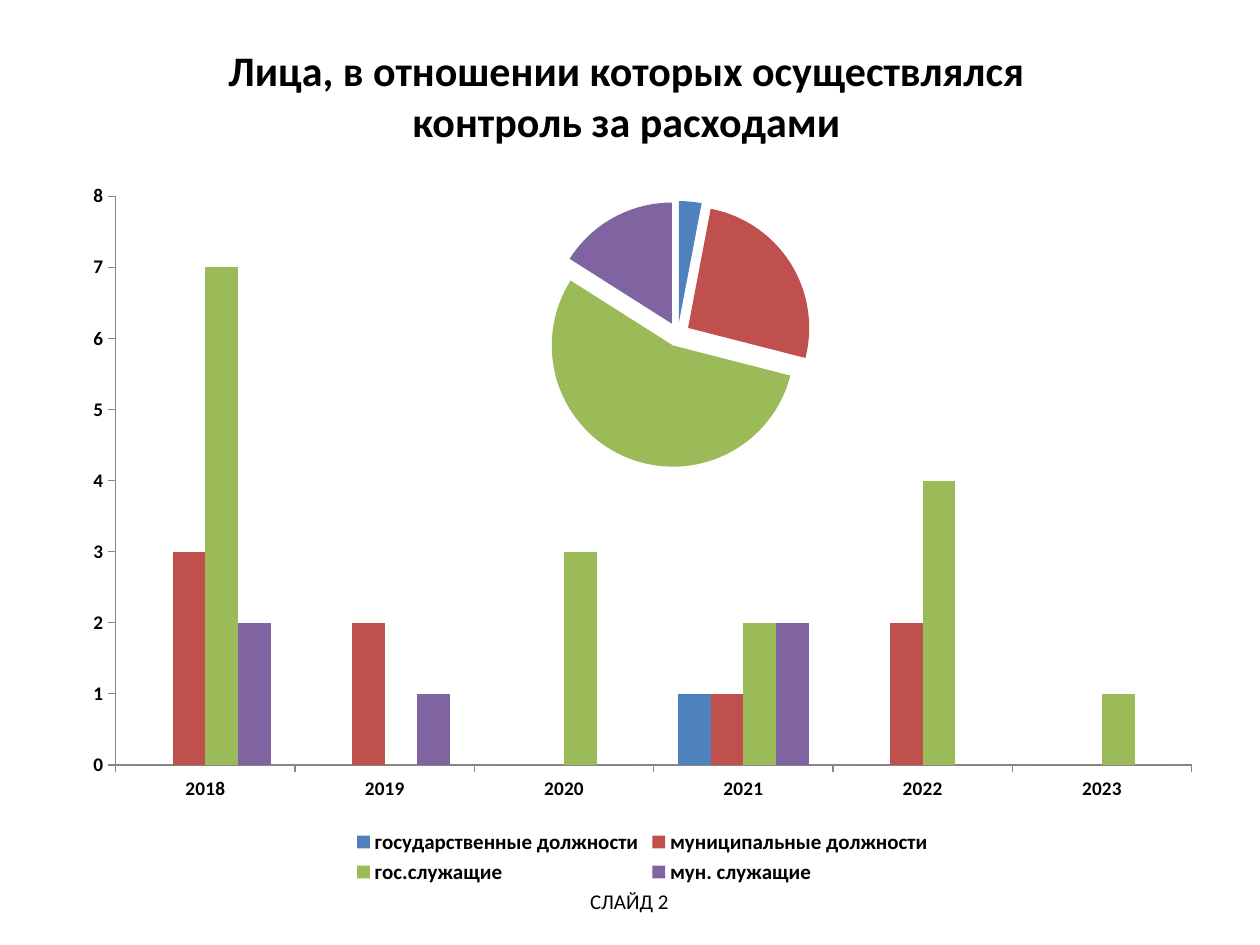
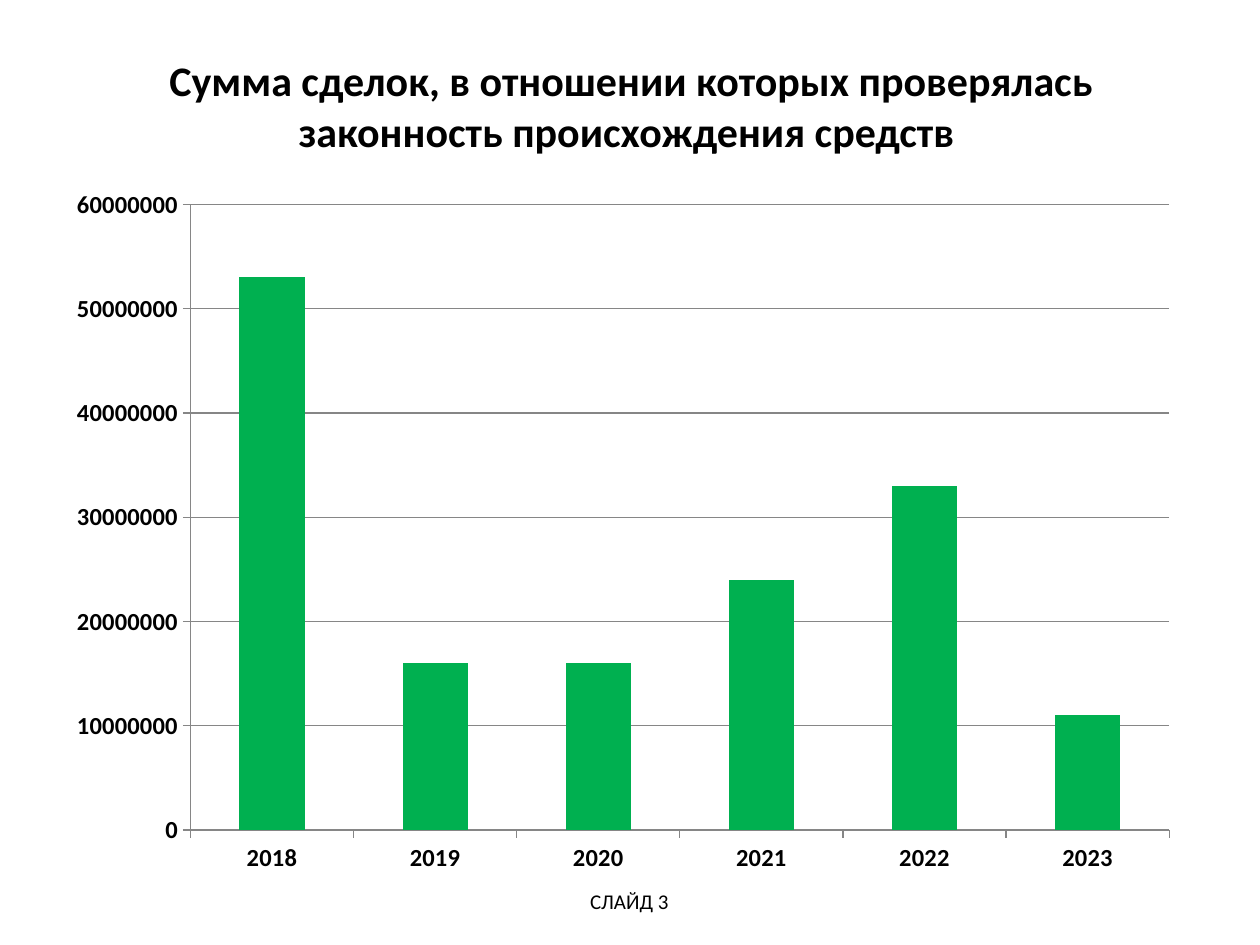
from lxml.etree import SubElement
from pptx import Presentation
from pptx.chart.data import CategoryChartData
from pptx.dml.color import RGBColor
from pptx.enum.chart import XL_CHART_TYPE, XL_LEGEND_POSITION, XL_TICK_MARK
from pptx.enum.text import MSO_ANCHOR, PP_ALIGN
from pptx.oxml import parse_xml
from pptx.oxml.ns import nsdecls, qn
from pptx.util import Inches, Pt

FONT = "Calibri"
BLACK, AXIS, GREEN = "000000", "868686", "00B050"
PALETTE = ["4F81BD", "C0504D", "9BBB59", "8064A2"]
YEARS = ["2018", "2019", "2020", "2021", "2022", "2023"]
STAFF = {
    "государственные должности": (0, 0, 0, 1, 0, 0),
    "муниципальные должности": (3, 2, 0, 1, 2, 0),
    "гос.служащие": (7, 0, 3, 2, 4, 1),
    "мун. служащие": (2, 1, 0, 2, 0, 0),
}
SUMS = {"Series 1": (53000000, 16000000, 16000000, 24000000, 33000000, 11000000)}
SHARES = {"Series 1": (3, 26, 55, 16)}

SLIDES = [
    dict(title="Лица, в отношении которых осуществлялся \nконтроль за расходами ",
         title_h=1.09, footer="СЛАЙД 2", box=(0.56, 1.35, 9.08, 5.71),
         data=STAFF, colors=PALETTE, size=11, grid=False, pie=True),
    dict(title="Сумма сделок, в отношении которых проверялась "
               "законность происхождения средств ",
         title_h=1.25, footer="СЛАЙД 3", box=(0.43, 1.39, 9.03, 5.65),
         data=SUMS, colors=[GREEN], size=14, grid=True, pie=False),
]


def add_text(slide, text, box, size, bold=False):
    tf = slide.shapes.add_textbox(*map(Inches, box)).text_frame
    tf.word_wrap = True
    tf.vertical_anchor = MSO_ANCHOR.MIDDLE
    p = tf.paragraphs[0]
    p.text = text
    p.alignment = PP_ALIGN.CENTER
    p.font.name, p.font.size, p.font.bold = FONT, Pt(size), bold
    p.font.color.rgb = RGBColor.from_string(BLACK)


def add_chart(slide, kind, categories, data, box):
    chart_data = CategoryChartData()
    chart_data.categories = categories
    for name, values in data.items():
        chart_data.add_series(name, values)
    chart = slide.shapes.add_chart(kind, *map(Inches, box), chart_data).chart
    chart.has_title = chart.has_legend = False
    chart.font.name, chart.font.size = FONT, Pt(10)
    chart.font.color.rgb = RGBColor.from_string(BLACK)
    clear = f'<c:spPr {nsdecls("c", "a")}><a:noFill/><a:ln><a:noFill/></a:ln></c:spPr>'
    body = chart.element.find(qn("c:chart"))
    body.addnext(parse_xml(clear))
    body.find(qn("c:plotArea")).append(parse_xml(clear))
    return chart


prs = Presentation()
prs.slide_width, prs.slide_height = Inches(10), Inches(7.5)

for s in SLIDES:
    slide = prs.slides.add_slide(prs.slide_layouts[6])
    add_text(slide, s["title"], (0.51, 0.21, 9, s["title_h"]), 24, True)

    if s["pie"]:
        pie = add_chart(slide, XL_CHART_TYPE.PIE, ["1", "2", "3", "4"], SHARES,
                        (2.01, 1.47, 7.17, 2.52))
        pie.plots[0].vary_by_categories = True
        ser = pie.plots[0].series[0]
        explosion = parse_xml(f'<c:explosion {nsdecls("c")} val="10"/>')
        ser._element.find(qn("c:tx")).addnext(explosion)
        for i, color in enumerate(PALETTE):
            fill = ser.points[i].format.fill
            fill.solid()
            fill.fore_color.rgb = RGBColor.from_string(color)
        area = pie.element.find(qn("c:chart")).find(qn("c:plotArea"))
        for old in area.findall(qn("c:layout")):
            area.remove(old)
        layout = parse_xml(f'<c:layout {nsdecls("c")}/>')
        manual = SubElement(layout, qn("c:manualLayout"))
        for tag, val in [("layoutTarget", "inner"), ("xMode", "edge"), ("yMode", "edge"),
                         ("x", 0.03), ("y", 0.05), ("w", 0.88), ("h", 0.84)]:
            SubElement(manual, qn(f"c:{tag}")).set("val", str(val))
        area.insert(0, layout)

    chart = add_chart(slide, XL_CHART_TYPE.COLUMN_CLUSTERED, YEARS, s["data"], s["box"])
    plot = chart.plots[0]
    plot.gap_width = 150
    plot.vary_by_categories = False
    for ser, color in zip(plot.series, s["colors"]):
        ser.format.fill.solid()
        ser.format.fill.fore_color.rgb = RGBColor.from_string(color)
    chart.value_axis.has_major_gridlines = s["grid"]
    lines = [chart.category_axis.format.line, chart.value_axis.format.line]
    if s["grid"]:
        lines.append(chart.value_axis.major_gridlines.format.line)
    for line in lines:
        line.width = Pt(0.75)
        line.color.rgb = RGBColor.from_string(AXIS)
    for axis in (chart.category_axis, chart.value_axis):
        axis.major_tick_mark = XL_TICK_MARK.OUTSIDE
        axis.minor_tick_mark = XL_TICK_MARK.NONE
        axis.tick_labels.font.size = Pt(s["size"])
        axis.tick_labels.font.bold = True
    if len(s["data"]) > 1:
        chart.has_legend = True
        chart.legend.position = XL_LEGEND_POSITION.BOTTOM
        chart.legend.include_in_layout = False
        chart.legend.font.size = Pt(12)
        chart.legend.font.bold = True

    add_text(slide, s["footer"], (3.41, 6.95, 3.17, 0.4), 12)

prs.save("out.pptx")
